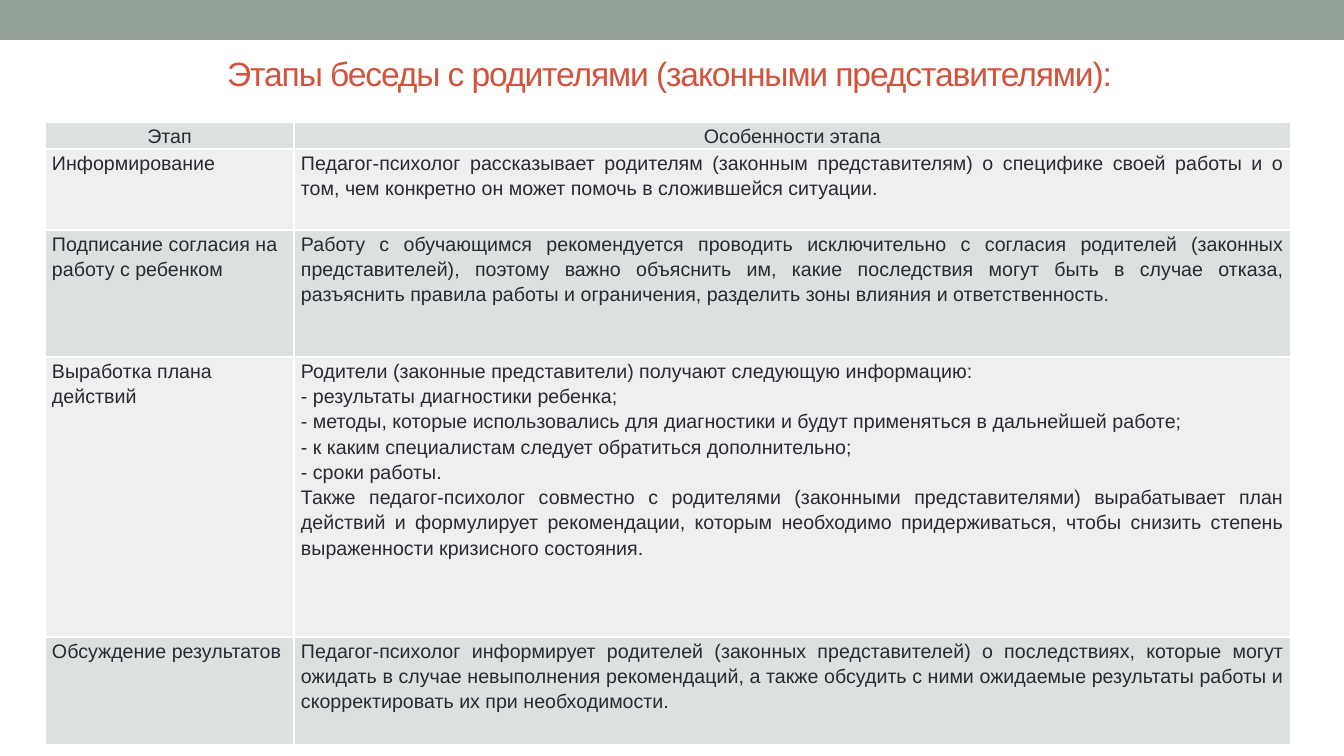
import lxml.etree
import pptx
import pptx.dml.color
import pptx.enum.shapes
import pptx.enum.text
import pptx.oxml.ns
import pptx.util

TITLE = "Этапы беседы с родителями (законными представителями):"
ALIGN = pptx.enum.text.PP_ALIGN
STAGES = [
    ("Этап", ["Особенности этапа"]),
    ("Информирование", [
        "Педагог-психолог рассказывает родителям (законным представителям) о специфике своей работы "
        "и о том, чем конкретно он может помочь в сложившейся ситуации."]),
    ("Подписание согласия на работу с ребенком", [
        "Работу с обучающимся рекомендуется проводить исключительно с согласия родителей (законных "
        "представителей), поэтому важно объяснить им, какие последствия могут быть в случае отказа, "
        "разъяснить правила работы и ограничения, разделить зоны влияния и ответственность."]),
    ("Выработка плана действий", [
        "Родители (законные представители) получают следующую информацию:",
        "- результаты диагностики ребенка;",
        "- методы, которые использовались для диагностики и будут применяться в дальнейшей работе;",
        "- к каким специалистам следует обратиться дополнительно;",
        "- сроки работы.",
        "Также педагог-психолог совместно с родителями (законными представителями) вырабатывает план "
        "действий и формулирует рекомендации, которым необходимо придерживаться, чтобы снизить степень "
        "выраженности кризисного состояния."]),
    ("Обсуждение результатов", [
        "Педагог-психолог информирует родителей (законных представителей) о последствиях, которые могут "
        "ожидать в случае невыполнения рекомендаций, а также обсудить с ними ожидаемые результаты работы "
        "и скорректировать их при необходимости."]),
]
COLUMN_WIDTHS = [249, 997]
ROW_HEIGHTS = [27, 81, 127, 280, 108]
BAND_FILLS = ["DCE0DE", "EEF0EF"]


def px(length):
    return pptx.util.Emu(round(length * 914400 / 100.8))


def color(value):
    return pptx.dml.color.RGBColor.from_string(value)


def paint(target, value):
    target.fill.solid()
    target.fill.fore_color.rgb = color(value)


def style(para, size, value, align):
    para.alignment = align
    para.font.name = "Arial"
    para.font.size = pptx.util.Pt(size)
    para.font.color.rgb = color(value)


def add_borders(cell, value):
    properties = cell._tc.get_or_add_tcPr()
    for position, side in enumerate(["lnL", "lnR", "lnT", "lnB"]):
        line = lxml.etree.Element(pptx.oxml.ns.qn(f"a:{side}"), w=str(pptx.util.Pt(1)))
        fill = lxml.etree.SubElement(line, pptx.oxml.ns.qn("a:solidFill"))
        lxml.etree.SubElement(fill, pptx.oxml.ns.qn("a:srgbClr"), val=value)
        properties.insert(position, line)


def fill_cell(cell, lines, align, band):
    cell.margin_left = cell.margin_right = px(7)
    cell.margin_top = cell.margin_bottom = 0
    cell.text = "\n".join(lines)
    for para in cell.text_frame.paragraphs:
        style(para, 14, "292934", align)
        para.line_spacing = 1.15
    paint(cell, band)
    add_borders(cell, "FFFFFF")


def add_title(page):
    title = page.shapes.title
    title.left, title.top, title.width, title.height = map(px, (187, 29, 965, 88))
    frame = title.text_frame
    frame.text = TITLE
    frame.word_wrap = True
    frame.auto_size = pptx.enum.text.MSO_AUTO_SIZE.NONE
    frame.vertical_anchor = pptx.enum.text.MSO_ANCHOR.MIDDLE
    para = frame.paragraphs[0]
    style(para, 24, "D2533C", ALIGN.CENTER)
    para.runs[0].font._element.set("spc", "-80")


def add_stages(page):
    table = page.shapes.add_table(
        len(STAGES), len(COLUMN_WIDTHS), px(45), px(122),
        px(sum(COLUMN_WIDTHS)), px(sum(ROW_HEIGHTS))).table
    table.first_row = table.horz_banding = False
    for column, width in zip(table.columns, COLUMN_WIDTHS):
        column.width = px(width)
    for index, (stage, details) in enumerate(STAGES):
        row = table.rows[index]
        row.height = px(ROW_HEIGHTS[index])
        band = BAND_FILLS[index % 2]
        aligns = (ALIGN.LEFT, ALIGN.JUSTIFY) if index else (ALIGN.CENTER, ALIGN.CENTER)
        for cell, lines, align in zip(row.cells, ([stage], details), aligns):
            fill_cell(cell, lines, align, band)


def main():
    deck = pptx.Presentation()
    deck.slide_width, deck.slide_height = px(1344), px(756)
    page = deck.slides.add_slide(deck.slide_layouts[5])
    band = page.shapes.add_shape(
        pptx.enum.shapes.MSO_SHAPE.RECTANGLE, 0, 0, px(1344), px(40))
    band.shadow.inherit = False
    paint(band, "93A299")
    band.line.fill.background()
    add_title(page)
    add_stages(page)
    deck.save("out.pptx")


if __name__ == "__main__":
    main()
